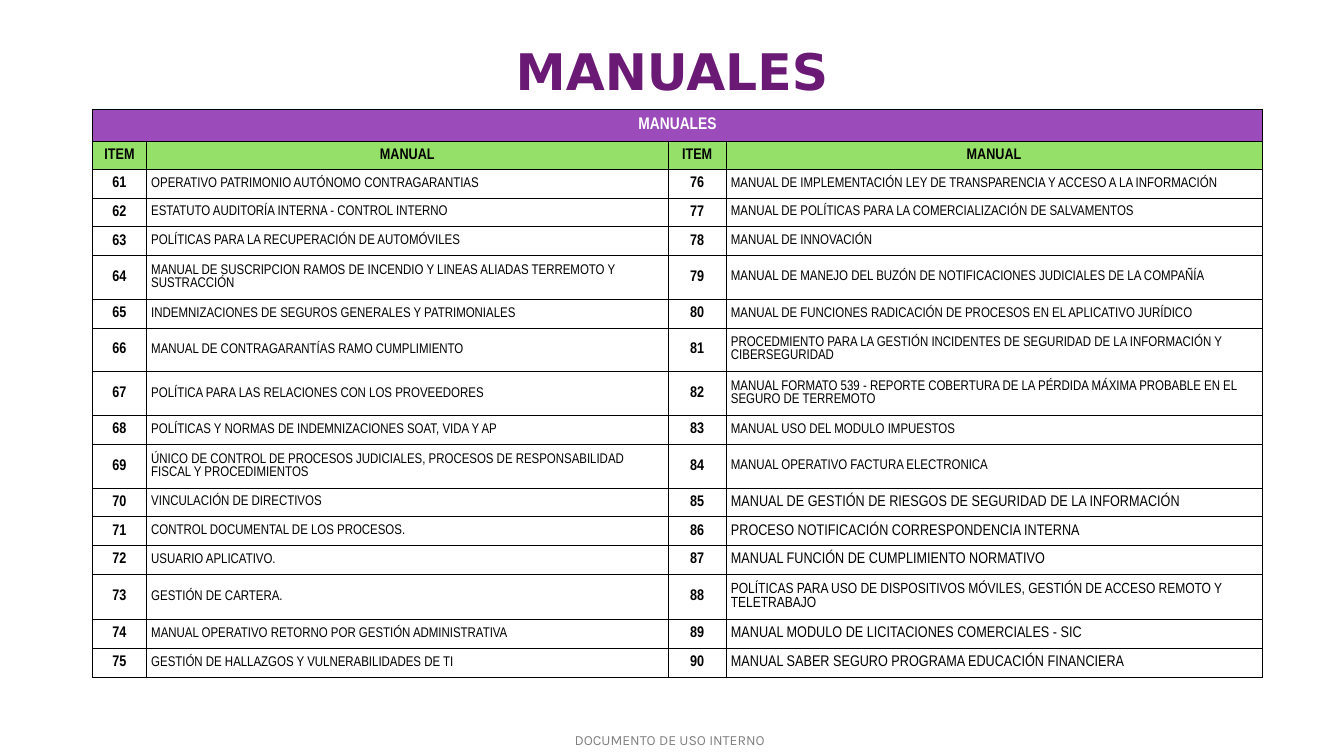
from lxml import etree
from pptx import Presentation, util as u
from pptx.dml.color import RGBColor
from pptx.enum import text
from pptx.oxml import ns

COLORS = {
    "title": "6A1A75", "banner": "9B4CBA", "header": "95E069",
    "ink": "000000", "white": "FFFFFF",
}
TABLE_FONT = "Arial Narrow"
COLUMN_WIDTHS = [0.53, 5.18, 0.57, 5.32]
BANNER_HEIGHT, HEADER_HEIGHT = 0.32, 0.28
ROW_HEIGHT, TALL_ROW_HEIGHT = 0.285, 0.435
TALL_ITEMS = {64, 66, 67, 69, 73}
FIRST_LEFT, FIRST_RIGHT = 61, 76
TEXT_SIZES = {85: 11, 86: 11, 87: 11, 88: 10.5, 89: 11, 90: 11}
LEFT_MANUALS = [
    "OPERATIVO PATRIMONIO AUTÓNOMO CONTRAGARANTIAS",
    "ESTATUTO AUDITORÍA INTERNA - CONTROL INTERNO",
    "POLÍTICAS PARA LA RECUPERACIÓN DE AUTOMÓVILES",
    "MANUAL DE SUSCRIPCION RAMOS DE INCENDIO Y LINEAS ALIADAS TERREMOTO Y SUSTRACCIÓN",
    "INDEMNIZACIONES DE SEGUROS GENERALES Y PATRIMONIALES",
    "MANUAL DE CONTRAGARANTÍAS RAMO CUMPLIMIENTO",
    "POLÍTICA PARA LAS RELACIONES CON LOS PROVEEDORES",
    "POLÍTICAS Y NORMAS DE INDEMNIZACIONES SOAT, VIDA Y AP",
    "ÚNICO DE CONTROL DE PROCESOS JUDICIALES, PROCESOS DE RESPONSABILIDAD FISCAL Y PROCEDIMIENTOS",
    "VINCULACIÓN DE DIRECTIVOS",
    "CONTROL DOCUMENTAL DE LOS PROCESOS.",
    "USUARIO APLICATIVO.",
    "GESTIÓN DE CARTERA.",
    "MANUAL OPERATIVO RETORNO POR GESTIÓN ADMINISTRATIVA",
    "GESTIÓN DE HALLAZGOS Y VULNERABILIDADES DE TI",
]
RIGHT_MANUALS = [
    "MANUAL DE IMPLEMENTACIÓN LEY DE TRANSPARENCIA Y ACCESO A LA INFORMACIÓN",
    "MANUAL DE POLÍTICAS PARA LA COMERCIALIZACIÓN DE SALVAMENTOS",
    "MANUAL DE INNOVACIÓN",
    "MANUAL DE MANEJO DEL BUZÓN DE NOTIFICACIONES JUDICIALES DE LA COMPAÑÍA",
    "MANUAL DE FUNCIONES RADICACIÓN DE PROCESOS EN EL APLICATIVO JURÍDICO",
    "PROCEDMIENTO PARA LA GESTIÓN INCIDENTES DE SEGURIDAD DE LA INFORMACIÓN Y CIBERSEGURIDAD",
    "MANUAL FORMATO 539 - REPORTE COBERTURA DE LA PÉRDIDA MÁXIMA PROBABLE EN EL SEGURO DE TERREMOTO",
    "MANUAL USO DEL MODULO IMPUESTOS",
    "MANUAL OPERATIVO FACTURA ELECTRONICA",
    "MANUAL DE GESTIÓN DE RIESGOS DE SEGURIDAD DE LA INFORMACIÓN",
    "PROCESO NOTIFICACIÓN CORRESPONDENCIA INTERNA",
    "MANUAL FUNCIÓN DE CUMPLIMIENTO NORMATIVO",
    "POLÍTICAS PARA USO DE DISPOSITIVOS MÓVILES, GESTIÓN DE ACCESO REMOTO Y TELETRABAJO",
    "MANUAL MODULO DE LICITACIONES COMERCIALES - SIC",
    "MANUAL SABER SEGURO PROGRAMA EDUCACIÓN FINANCIERA",
]


def add_span(para, words, font, size, color, bold=False):
    span = para.add_run()
    span.text = words
    span.font.name = font
    span.font.size = u.Pt(size)
    span.font.bold = bold
    span.font.color.rgb = RGBColor.from_string(COLORS[color])
    return span


def set_margins(frame, left, top, right, bottom):
    frame.margin_left, frame.margin_top = u.Inches(left), u.Inches(top)
    frame.margin_right, frame.margin_bottom = u.Inches(right), u.Inches(bottom)


def add_title(page):
    box = page.shapes.title
    box.left, box.top = u.Inches(1.23), u.Inches(0.32)
    box.width, box.height = u.Inches(10.87), u.Inches(0.76)
    frame = box.text_frame
    frame.word_wrap = True
    frame.auto_size = text.MSO_AUTO_SIZE.NONE
    frame.vertical_anchor = text.MSO_ANCHOR.MIDDLE
    set_margins(frame, 0.08, 0.08, 0.08, 0.08)
    para = frame.paragraphs[0]
    para.alignment = text.PP_ALIGN.CENTER
    add_span(para, "MANUALES", "DejaVu Sans", 36, "title", True)


def add_footer(page):
    box = page.shapes.add_textbox(u.Inches(5.7), u.Inches(7.26), u.Inches(1.95), u.Inches(0.17))
    frame = box.text_frame
    frame.word_wrap = True
    set_margins(frame, 0, 0, 0, 0)
    span = add_span(frame.paragraphs[0], "DOCUMENTO DE USO INTERNO", "Karla", 10, "ink")
    color = span.font.fill._xPr.find(".//" + ns.qn("a:srgbClr"))
    etree.SubElement(color, ns.qn("a:alpha"), val="50000")


def set_borders(cell):
    properties = cell._tc.get_or_add_tcPr()
    for side in ("lnL", "lnR", "lnT", "lnB"):
        line = etree.SubElement(properties, ns.qn("a:" + side), w=str(u.Pt(0.5)))
        fill = etree.SubElement(line, ns.qn("a:solidFill"))
        etree.SubElement(fill, ns.qn("a:srgbClr"), val=COLORS["ink"])


def paint_cell(cell, fill=None):
    set_borders(cell)
    if fill:
        cell.fill.solid()
        cell.fill.fore_color.rgb = RGBColor.from_string(COLORS[fill])
    else:
        cell.fill.background()


def write_cell(cell, words, size, bold=True, color="ink", centered=True):
    cell.vertical_anchor = text.MSO_ANCHOR.MIDDLE
    para = cell.text_frame.paragraphs[0]
    para.alignment = text.PP_ALIGN.CENTER if centered else text.PP_ALIGN.LEFT
    add_span(para, words, TABLE_FONT, size, color, bold)


def write_manual(table, row, column, item, name):
    number, label = table.cell(row, column), table.cell(row, column + 1)
    for cell in (number, label):
        paint_cell(cell)
        set_margins(cell, 0.05, 0.05, 0.05, 0.05)
    write_cell(number, str(item), 11)
    write_cell(label, name, TEXT_SIZES.get(item, 10), bold=False, centered=False)


def write_headings(table):
    for column, heading in enumerate(["ITEM", "MANUAL"] * 2):
        for row, fill in enumerate(["banner", "header"]):
            cell = table.cell(row, column)
            paint_cell(cell, fill)
            set_margins(cell, 0.01, 0.01, 0.01, 0)
        write_cell(table.cell(1, column), heading, 11)
    banner = table.cell(0, 0)
    banner.merge(table.cell(0, 3))
    write_cell(banner, "MANUALES", 12, color="white")


def add_manuals_table(page):
    heights = [BANNER_HEIGHT, HEADER_HEIGHT] + [
        TALL_ROW_HEIGHT if FIRST_LEFT + index in TALL_ITEMS else ROW_HEIGHT
        for index in range(len(LEFT_MANUALS))
    ]
    table = page.shapes.add_table(
        len(heights), len(COLUMN_WIDTHS), u.Inches(0.92), u.Inches(1.08),
        u.Inches(sum(COLUMN_WIDTHS)), u.Inches(sum(heights)),
    ).table
    table.first_row = table.horz_banding = False
    for column, width in zip(table.columns, COLUMN_WIDTHS):
        column.width = u.Inches(width)
    for row, height in zip(table.rows, heights):
        row.height = u.Inches(height)
    write_headings(table)
    for index, (left, right) in enumerate(zip(LEFT_MANUALS, RIGHT_MANUALS)):
        write_manual(table, index + 2, 0, FIRST_LEFT + index, left)
        write_manual(table, index + 2, 2, FIRST_RIGHT + index, right)


def main():
    deck = Presentation()
    deck.slide_width, deck.slide_height = u.Inches(13.33), u.Inches(7.5)
    page = deck.slides.add_slide(deck.slide_layouts[5])
    add_footer(page)
    add_title(page)
    add_manuals_table(page)
    deck.save("out.pptx")


if __name__ == "__main__":
    main()
